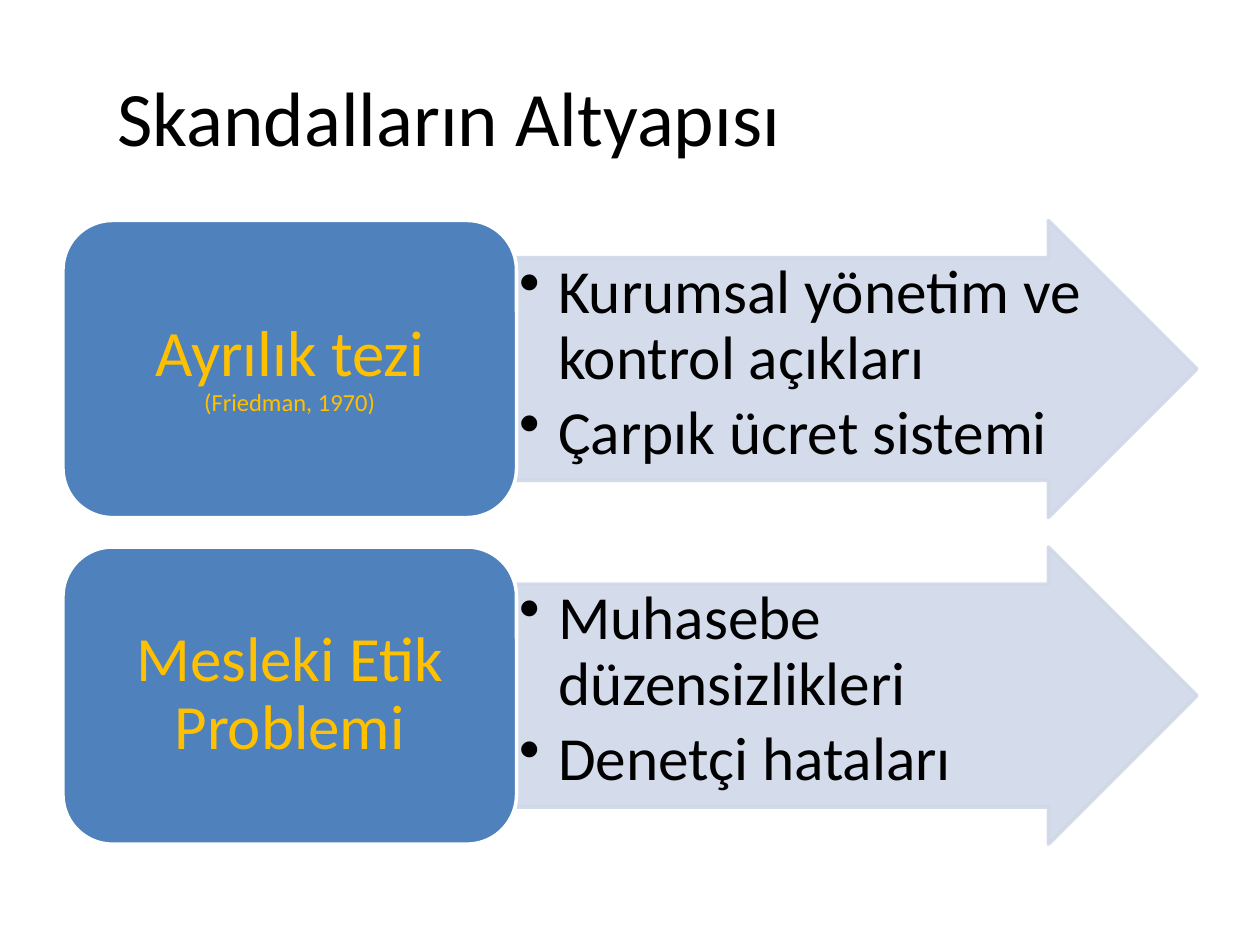
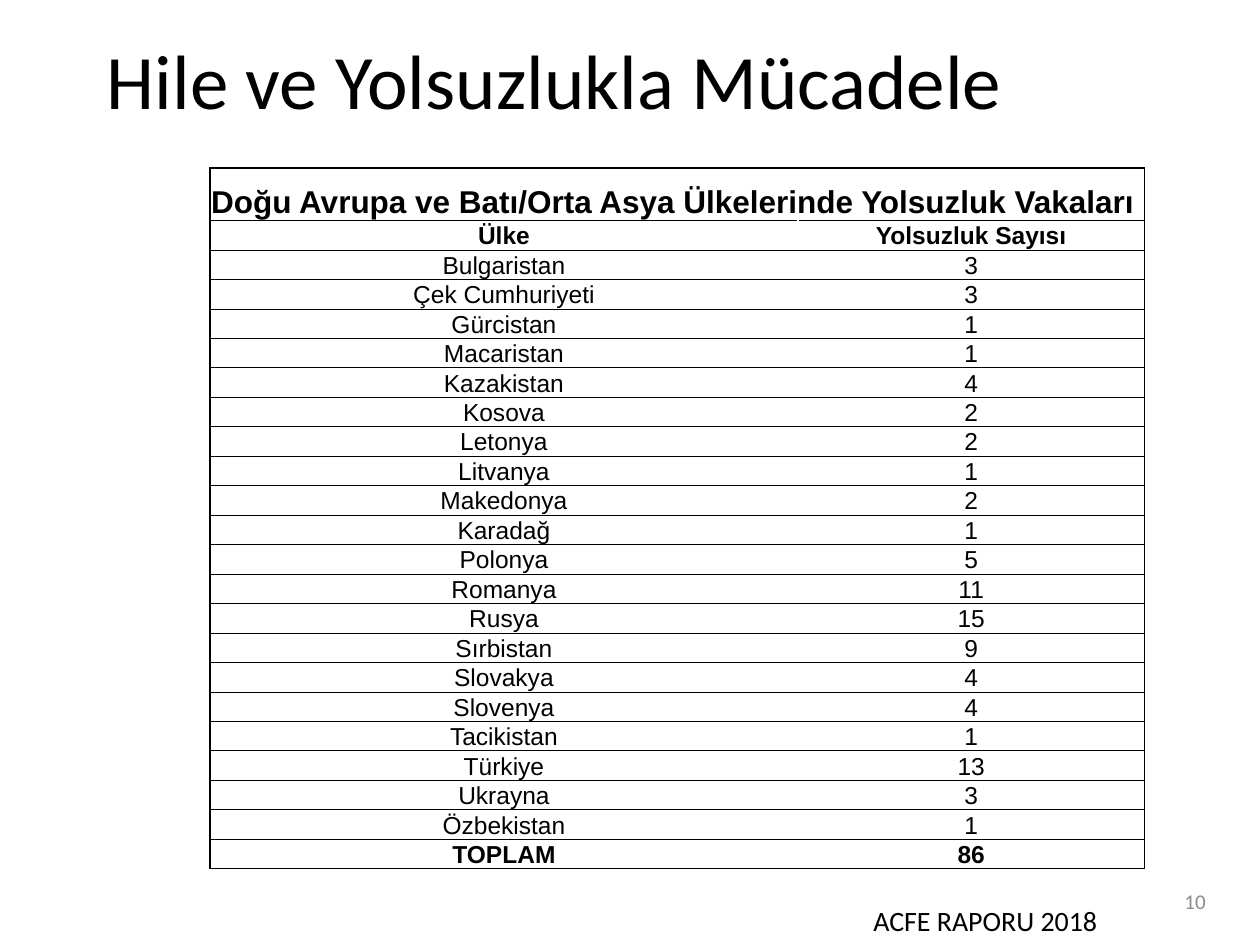
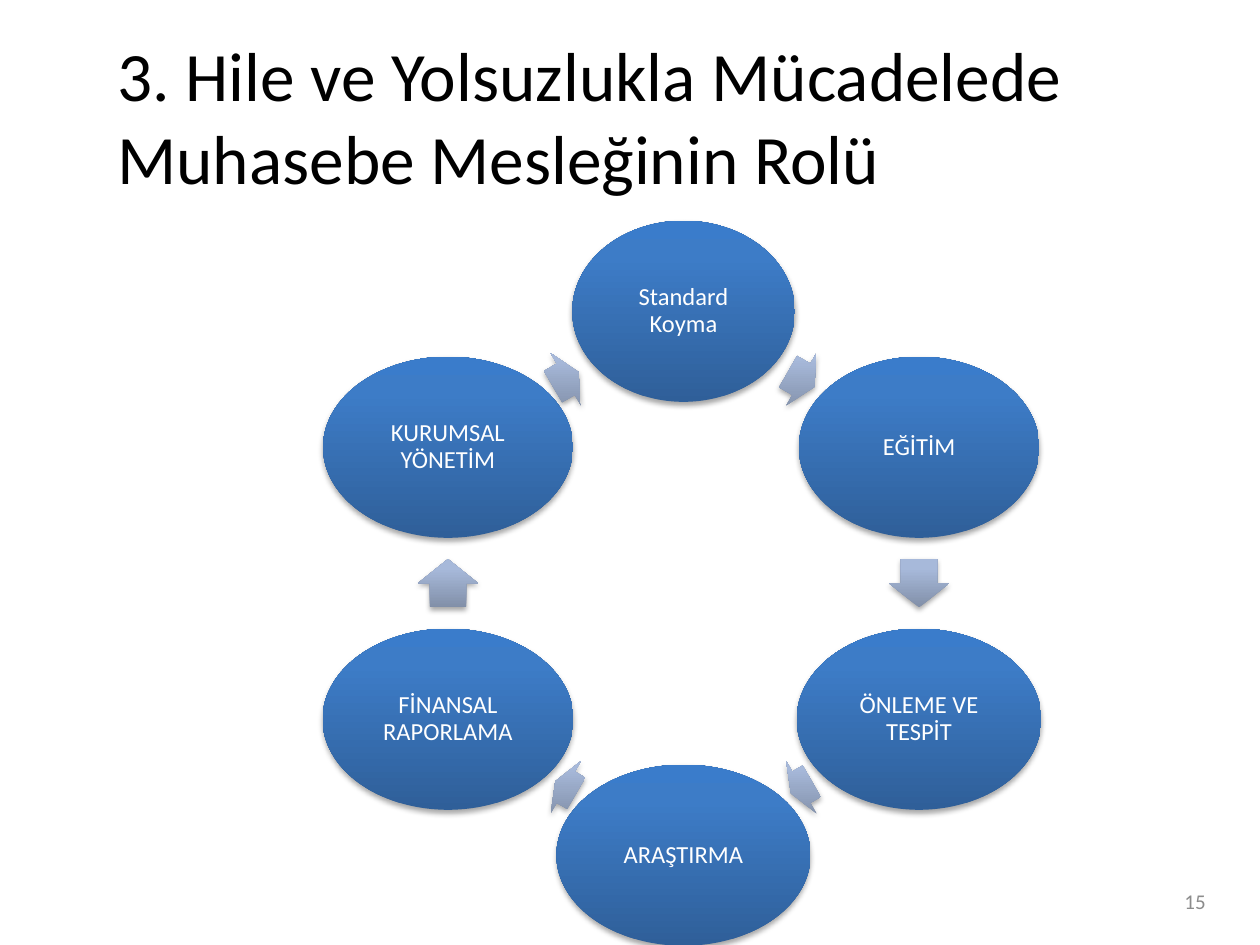
"""Build three slides on scandals, fraud figures and the role of accountants."""
import math
from dataclasses import dataclass

from pptx import Presentation
from pptx import util as u
from pptx.dml.color import RGBColor
from pptx.enum import shapes, text
from pptx.oxml import parse_xml
from pptx.oxml.ns import nsdecls, qn

SHAPE = shapes.MSO_SHAPE
ALIGN = text.PP_ALIGN
ANCHOR = text.MSO_ANCHOR


@dataclass(frozen=True)
class Theme:
    """Colours, fonts and type sizes shared by all slides."""
    ink: str = "000000"
    paper: str = "FFFFFF"
    muted: str = "8C8C8C"
    accent: str = "4F81BD"
    pale: str = "D0D8E8"
    gold: str = "FFC000"
    node: tuple = ((0, "2F5F99"), (80, "3D7CC7"), (100, "3A7CCB"))
    link: tuple = ((0, "818FA8"), (80, "A7B9DA"), (100, "A7BADC"))
    body_font: str = "Calibri"
    table_font: str = "Arial"
    title: float = 44
    long_title: float = 39.6
    bullet: float = 35
    source: float = 16
    small: float = 14
    number: float = 12
    caption: float = 18


class Deck:
    """Draw styled elements on the current slide, on a 120 by 90 grid."""

    def __init__(self, theme):
        """Start an empty deck of 10 by 7.5 inches."""
        self.theme = theme
        self.show = Presentation()
        self.show.slide_width, self.show.slide_height = u.Inches(10), u.Inches(7.5)
        self.unit = self.show.slide_width / 120
        self.page = None

    def grid(self, *cells):
        """Turn grid counts into lengths."""
        return [u.Emu(round(cell * self.unit)) for cell in cells]

    def add_page(self, title, left=10, top=3.5, size=None):
        """Add a blank slide with its title."""
        self.page = self.show.slides.add_slide(self.show.slide_layouts[6])
        self.label(title, (left, top, 106, 15), size or self.theme.title)

    def style(self, font, size, color, name=None, bold=None):
        """Set the look of a font."""
        font.name, font.size, font.bold = name or self.theme.body_font, u.Pt(size), bold
        font.color.rgb = RGBColor.from_string(color)

    def set_text(self, frame, line, size, color, align=None, after=None, inset=None, anchor=ANCHOR.MIDDLE):
        """Put one styled paragraph in a text frame."""
        frame.word_wrap, frame.vertical_anchor = True, anchor
        if inset:
            frame.margin_left = frame.margin_right = u.Inches(inset[0])
            frame.margin_top = frame.margin_bottom = u.Inches(inset[1])
        para = frame.paragraphs[0]
        para.text = line
        para.alignment = align
        if after is not None:
            para.line_spacing, para.space_after = 0.9, u.Pt(after)
        self.style(para.font, size, color)

    def label(self, line, area, size, color=None, align=None, anchor=ANCHOR.MIDDLE):
        """Add a plain text box."""
        box = self.page.shapes.add_textbox(*self.grid(*area))
        self.set_text(box.text_frame, line, size, color or self.theme.ink, align, anchor=anchor)

    def page_number(self, number):
        """Add the slide number at the lower right."""
        self.label(str(number), (88, 83.4, 28, 4.8), self.theme.number, self.theme.muted, ALIGN.RIGHT)

    def shape(self, kind, area, fill, line=None, adjust=()):
        """Add a preset shape without a shadow."""
        shape = self.page.shapes.add_shape(kind, *self.grid(*area))
        shape.shadow.inherit = False
        for index, value in enumerate(adjust):
            shape.adjustments[index] = value
        shape.fill.solid()
        shape.fill.fore_color.rgb = RGBColor.from_string(fill)
        if line:
            shape.line.color.rgb = RGBColor.from_string(line)
            shape.line.width = u.Pt(2)
        else:
            shape.line.fill.background()
        return shape

    def glossy(self, kind, center, size, stops, turn=0, adjust=()):
        """Add a centred shape with an upright gradient and a soft shadow."""
        (x, y), (width, height) = center, size
        shape = self.shape(kind, (x - width / 2, y - height / 2, width, height), self.theme.accent, adjust=adjust)
        shape.rotation = turn
        marks = "".join(f'<a:gs pos="{place * 1000}"><a:srgbClr val="{color}"/></a:gs>' for place, color in stops)
        props = shape._element.spPr
        props.replace(props.find(qn("a:solidFill")), parse_xml(
            f'<a:gradFill {nsdecls("a")} rotWithShape="0"><a:gsLst>{marks}</a:gsLst>'
            '<a:lin ang="16200000" scaled="0"/></a:gradFill>'))
        props.find(qn("a:effectLst")).append(parse_xml(
            f'<a:outerShdw {nsdecls("a")} blurRad="{u.Pt(3.1)}" dist="{u.Pt(1.8)}" dir="5400000" '
            'rotWithShape="0"><a:srgbClr val="000000"><a:alpha val="35000"/></a:srgbClr></a:outerShdw>'))
        return shape

    def bullet_arrow(self, lines, area):
        """Add a pale wide arrow holding bulleted lines."""
        theme = self.theme
        arrow = self.shape(SHAPE.RIGHT_ARROW, area, theme.pale, theme.pale, (0.75, 0.5))
        for color in arrow._element.spPr.iter(qn("a:srgbClr")):
            color.append(parse_xml(f'<a:alpha {nsdecls("a")} val="90000"/>'))
        frame = arrow.text_frame
        frame.word_wrap, frame.vertical_anchor = True, ANCHOR.TOP
        frame.margin_left = frame.margin_right = frame.margin_top = frame.margin_bottom = u.Inches(0.02)
        for index, line in enumerate(lines):
            para = frame.add_paragraph() if index else frame.paragraphs[0]
            para.text = line
            props = para._p.get_or_add_pPr()
            props.set("marL", str(u.Inches(0.31)))
            props.set("indent", str(-u.Inches(0.31)))
            props.append(parse_xml(f'<a:buChar {nsdecls("a")} char="•"/>'))
            para.alignment, para.line_spacing, para.space_after = ALIGN.LEFT, 0.9, u.Pt(5)
            self.style(para.font, theme.bullet, theme.ink)

    def topic(self, line, area, size, note=None):
        """Add a rounded box with a topic and an optional small note."""
        theme = self.theme
        box = self.shape(SHAPE.ROUNDED_RECTANGLE, area, theme.accent, theme.paper)
        self.set_text(box.text_frame, line, size, theme.gold, ALIGN.CENTER, 0, (0.15, 0.08))
        if note:
            span = box.text_frame.paragraphs[0].add_run()
            span.text = note
            span.font.size = u.Pt(theme.small)

    def border(self, cell, **weights):
        """Draw the named cell edges in points."""
        props = cell._tc.get_or_add_tcPr()
        for index, edge in enumerate(edge for edge in "LRTB" if edge in weights):
            props.insert(index, parse_xml(
                f'<a:ln{edge} {nsdecls("a")} w="{u.Pt(weights[edge])}"><a:solidFill>'
                f'<a:srgbClr val="{self.theme.ink}"/></a:solidFill></a:ln{edge}>'))

    def table(self, caption, rows, area, widths, caption_height):
        """Add a ruled table under a merged caption row."""
        theme, last = self.theme, len(rows)
        table = self.page.shapes.add_table(last + 1, len(widths), *self.grid(*area)).table
        table.first_row = table.horz_banding = False
        for column, width in zip(table.columns, self.grid(*widths)):
            column.width = width
        heights = [caption_height] + [(area[3] - caption_height) / last] * last
        for row, height in zip(table.rows, self.grid(*heights)):
            row.height = height
        table.cell(0, 0).merge(table.cell(0, len(widths) - 1))
        for r, values in enumerate([(caption, "")] + rows):
            for c, value in enumerate(values):
                cell = table.cell(r, c)
                cell.fill.background()
                cell.vertical_anchor = ANCHOR.BOTTOM
                cell.margin_left = cell.margin_right = u.Inches(0.01)
                cell.margin_top = cell.margin_bottom = 0
                para = cell.text_frame.paragraphs[0]
                para.text = str(value)
                para.alignment = ALIGN.CENTER if r else ALIGN.LEFT
                self.style(para.font, theme.small if r else theme.caption, theme.ink,
                           theme.table_font, r in (0, 1, last))
                side = {"R" if c else "L": 1} if r else {"L": 1, "R": 1}
                self.border(cell, T=1 if r < 2 else 0.5, B=1 if r in (0, last) else 0.5, **side)

    def cycle(self, steps, center, radius, height):
        """Place steps clockwise on a ring with an arrow after each."""
        turn = 360 / len(steps)

        def spot(index, reach):
            """Find a point on a ring, counted clockwise from the top."""
            angle = math.radians(turn * index)
            return center[0] + reach * math.sin(angle), center[1] - reach * math.cos(angle)

        for index, (line, width, length) in enumerate(steps):
            node = self.glossy(SHAPE.OVAL, spot(index, radius), (width, height), self.theme.node)
            self.set_text(node.text_frame, line, self.theme.small, self.theme.paper,
                          ALIGN.CENTER, 0, (0.02, 0.02))
            middle = spot(index + 0.5, radius * math.cos(math.radians(turn / 2)))
            self.glossy(SHAPE.RIGHT_ARROW, middle, (length, height / 3), self.theme.link,
                        turn * (index + 0.5), (0.6, 0.5))


COUNTRIES = [
    ("Bulgaristan", 3), ("Çek Cumhuriyeti", 3), ("Gürcistan", 1), ("Macaristan", 1),
    ("Kazakistan", 4), ("Kosova", 2), ("Letonya", 2), ("Litvanya", 1), ("Makedonya", 2),
    ("Karadağ", 1), ("Polonya", 5), ("Romanya", 11), ("Rusya", 15), ("Sırbistan", 9),
    ("Slovakya", 4), ("Slovenya", 4), ("Tacikistan", 1), ("Türkiye", 13), ("Ukrayna", 3),
    ("Özbekistan", 1),
]
TOPICS = [
    ("Ayrılık tezi ", 37, "(Friedman, 1970)", ["Kurumsal yönetim ve kontrol açıkları", "Çarpık ücret sistemi"]),
    ("Mesleki Etik Problemi", 36, None, ["Muhasebe düzensizlikleri", "Denetçi hataları"]),
]
STEPS = [
    ("Standard Koyma", 21.2, 2.9), ("EĞİTİM", 22.9, 4.6), ("ÖNLEME VE TESPİT", 23.3, 2.3),
    ("ARAŞTIRMA", 24.2, 2.3), ("FİNANSAL RAPORLAMA", 23.9, 4.6), ("KURUMSAL YÖNETİM", 23.8, 2.8),
]


def main():
    """Build and save the deck."""
    theme = Theme()
    deck = Deck(theme)

    deck.add_page("Skandalların Altyapısı")
    for index, (line, size, note, bullets) in enumerate(TOPICS):
        top = 21 + 31.1 * index
        deck.bullet_arrow(bullets, (49.2, top, 64.8, 28.3))
        deck.topic(line, (6, top, 43.2, 28.3), size, note)

    deck.add_page("Hile ve Yolsuzlukla Mücadele", 9, 0)
    deck.page_number(10)
    total = sum(count for _, count in COUNTRIES)
    deck.table("Doğu Avrupa ve Batı/Orta Asya Ülkelerinde Yolsuzluk Vakaları",
               [("Ülke", "Yolsuzluk Sayısı"), *COUNTRIES, ("TOPLAM", total)],
               (20, 16, 89, 65.2), (56, 33), 5)
    deck.label("ACFE RAPORU 2018", (82, 85.5, 36, 4.5), theme.source, anchor=ANCHOR.TOP)

    deck.add_page("3. Hile ve Yolsuzlukla Mücadelede Muhasebe Mesleğinin Rolü", size=theme.long_title)
    deck.page_number(15)
    deck.cycle(STEPS, (65.1, 55.55), 25.9, 17.25)

    deck.show.save("out.pptx")


if __name__ == "__main__":
    main()
